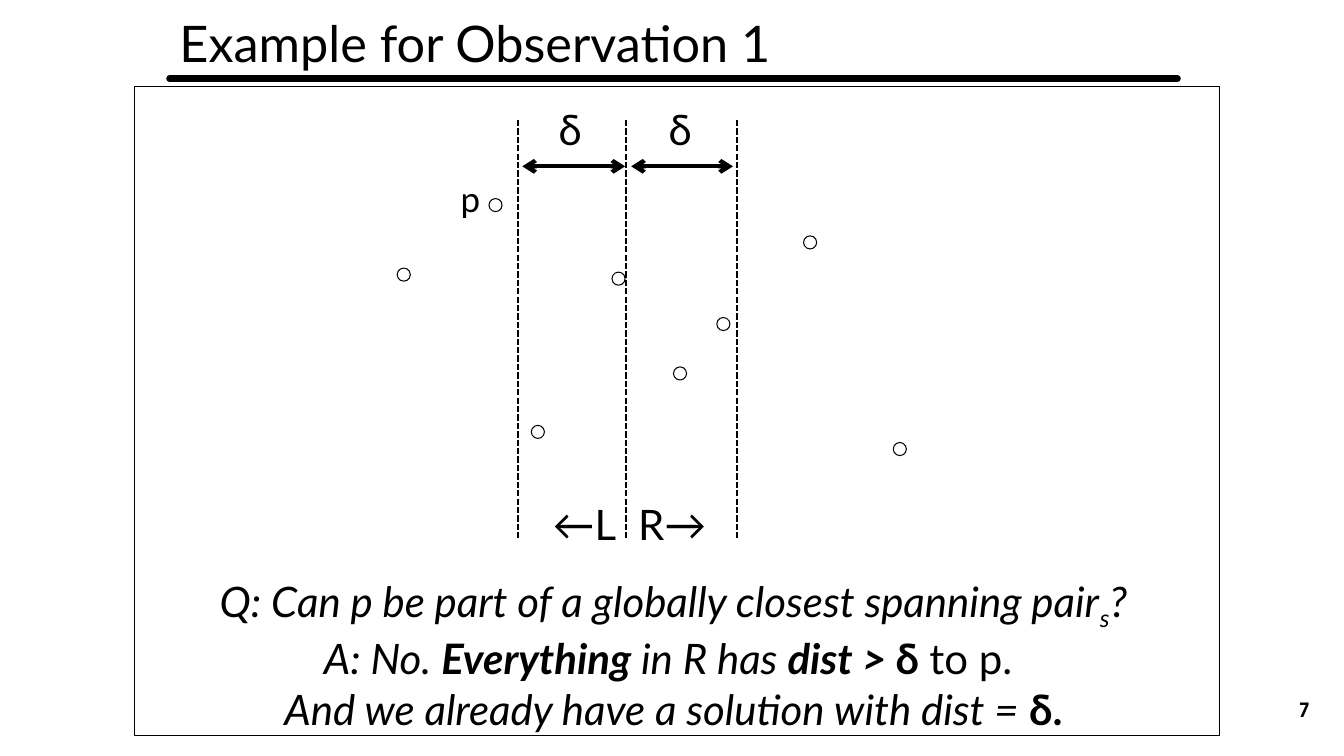
from pptx import Presentation
from pptx import util as u
from pptx.dml.color import RGBColor
from pptx.enum import dml, shapes, text
from pptx.oxml.ns import qn
from lxml import etree

BLACK = RGBColor(0, 0, 0)
WHITE = RGBColor(255, 255, 255)
BODY_FONT = "Lato"
NUMBER_FONT = "TeX Gyre Adventor"

TITLE = "Example for Observation 1"
POINTS = [(7.97, 2.34), (6.07, 2.7), (8.86, 4.39), (3.94, 2.66), (4.85, 1.97),
          (7.11, 3.15), (5.27, 4.22), (6.68, 3.64)]
POINT_SIZE = 0.13
STRIP_LINES = [5.14, 6.21, 7.31]
STRIP_TOP, STRIP_BOTTOM = 1.19, 5.35
DELTA_ARROWS = [(5.18, 6.2), (6.26, 7.27)]
ARROW_Y = 1.65

# Each paragraph is a list of (text, style); style letters: b bold, i italic, s subscript
ANSWER = [
    [("Q: Can p be part of a globally closest spanning pair", "i"), ("s", "is"), ("?", "i")],
    [("A: No. ", "i"), ("Everything", "ib"), (" in R has ", "i"), ("dist > ", "ib"),
     ("δ ", "b"), ("to p. ", "")],
    [("And we already have a solution with dist = ", "i"), ("δ.", "b")],
]

LEFT, CENTER, RIGHT = text.PP_ALIGN.LEFT, text.PP_ALIGN.CENTER, text.PP_ALIGN.RIGHT
LABELS = [
    ("p", (4.47, 1.71, 0.62, 0.52), dict(size=25)),
    ("δ ", (5.31, 0.98, 0.8, 0.61), dict(align=CENTER)),
    ("δ ", (6.4, 0.98, 0.8, 0.61), dict(align=CENTER)),
    ("←L", (4.39, 4.9, 1.82, 0.61), dict(align=RIGHT)),
    ("R→", (6.23, 4.9, 1.82, 0.61), {}),
    (ANSWER, (1.21, 5.66, 10.94, 1.62), dict(align=CENTER)),
    ("7", (12.49, 6.84, 0.6, 0.4), dict(size=14, font=NUMBER_FONT, style="b", align=RIGHT,
                                        anchor=text.MSO_ANCHOR.MIDDLE)),
]


def write_text(box, content, size=30, font=BODY_FONT, style="", align=LEFT,
               anchor=text.MSO_ANCHOR.TOP):
    """Fill a box with one string, or with paragraphs of (text, style) spans."""
    frame = box.text_frame
    frame.word_wrap = True
    frame.auto_size = text.MSO_AUTO_SIZE.NONE
    frame.vertical_anchor = anchor
    paragraphs = [[(content, style)]] if isinstance(content, str) else content
    for index, spans in enumerate(paragraphs):
        para = frame.add_paragraph() if index else frame.paragraphs[0]
        para.alignment = align
        for words, marks in spans:
            span = para.add_run()
            span.text = words
            span.font.name = font
            span.font.size = u.Pt(size)
            span.font.color.rgb = BLACK
            span.font.bold = "b" in marks
            span.font.italic = "i" in marks
            if "s" in marks:
                span.font._element.set("baseline", "-25000")


def place(box, left, top, width, height):
    box.left, box.top = u.Inches(left), u.Inches(top)
    box.width, box.height = u.Inches(width), u.Inches(height)


def add_outline(slide, kind, *bounds):
    """Add a white shape with a thin black outline."""
    shape = slide.shapes.add_shape(kind, *map(u.Inches, bounds))
    shape.shadow.inherit = False
    shape.fill.solid()
    shape.fill.fore_color.rgb = WHITE
    shape.line.color.rgb = BLACK
    shape.line.width = u.Pt(0.75)


def add_line(slide, start, end, width, dash=None, arrows=False, round_cap=False):
    line = slide.shapes.add_connector(shapes.MSO_CONNECTOR.STRAIGHT,
                                      *map(u.Inches, (*start, *end)))
    line.line.color.rgb = BLACK
    line.line.width = u.Pt(width)
    if dash:
        line.line.dash_style = dash
    outline = line.line._get_or_add_ln()
    if round_cap:
        outline.set("cap", "rnd")
    if arrows:
        for tag in ("a:headEnd", "a:tailEnd"):
            etree.SubElement(outline, qn(tag), type="arrow")
    etree.SubElement(line._element.spPr, qn("a:effectLst"))


def main():
    deck = Presentation()
    deck.slide_width, deck.slide_height = u.Inches(13.33), u.Inches(7.5)
    slide = deck.slides.add_slide(deck.slide_layouts[5])

    place(slide.shapes.title, 1.68, 0.07, 9.44, 0.71)
    write_text(slide.shapes.title, TITLE, size=36)
    add_line(slide, (1.68, 0.78), (11.68, 0.78), 4.5, round_cap=True)

    add_outline(slide, shapes.MSO_SHAPE.FLOWCHART_PROCESS, 1.33, 0.86, 10.77, 6.44)
    for left, top in POINTS:
        add_outline(slide, shapes.MSO_SHAPE.OVAL, left, top, POINT_SIZE, POINT_SIZE)
    for x in STRIP_LINES:
        add_line(slide, (x, STRIP_TOP), (x, STRIP_BOTTOM), 1.5,
                 dash=dml.MSO_LINE.SQUARE_DOT)
    for start, end in DELTA_ARROWS:
        add_line(slide, (start, ARROW_Y), (end, ARROW_Y), 3, arrows=True)

    for content, bounds, style in LABELS:
        box = slide.shapes.add_textbox(*map(u.Inches, bounds))
        write_text(box, content, **style)
    deck.save("out.pptx")


if __name__ == "__main__":
    main()
